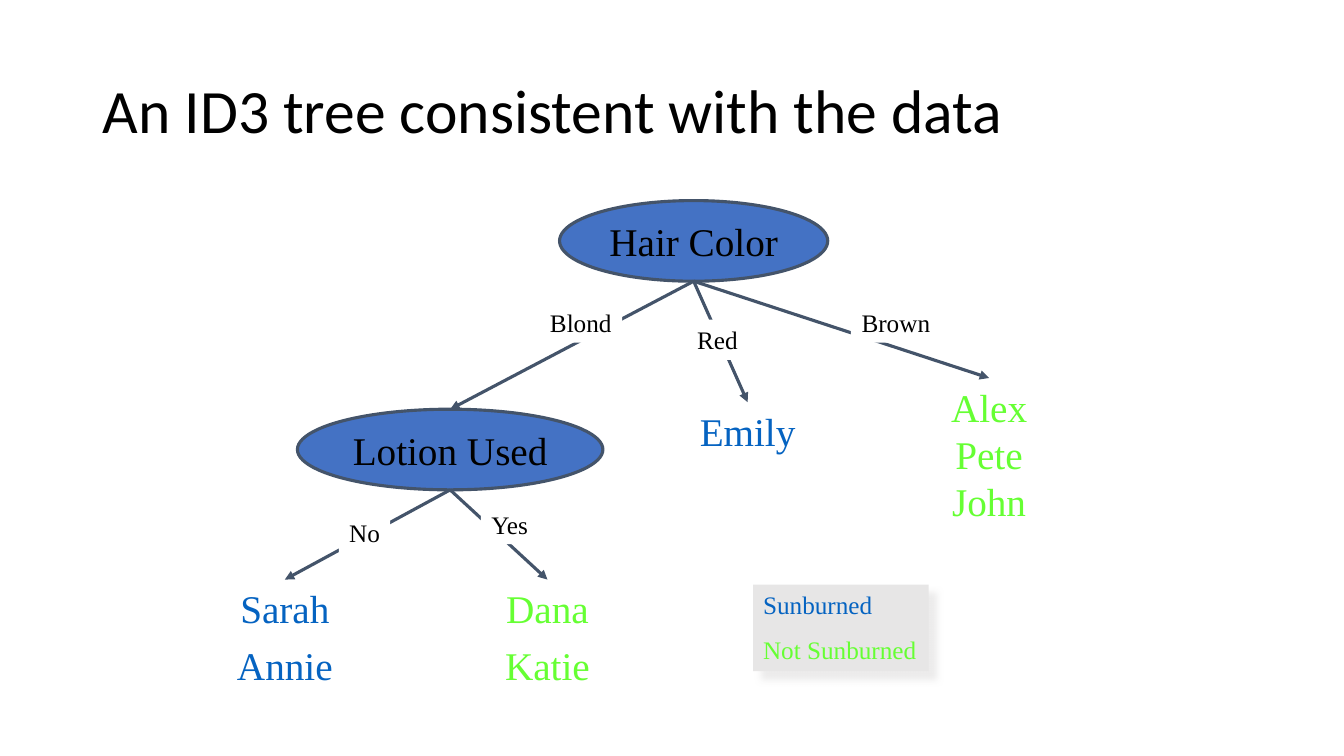
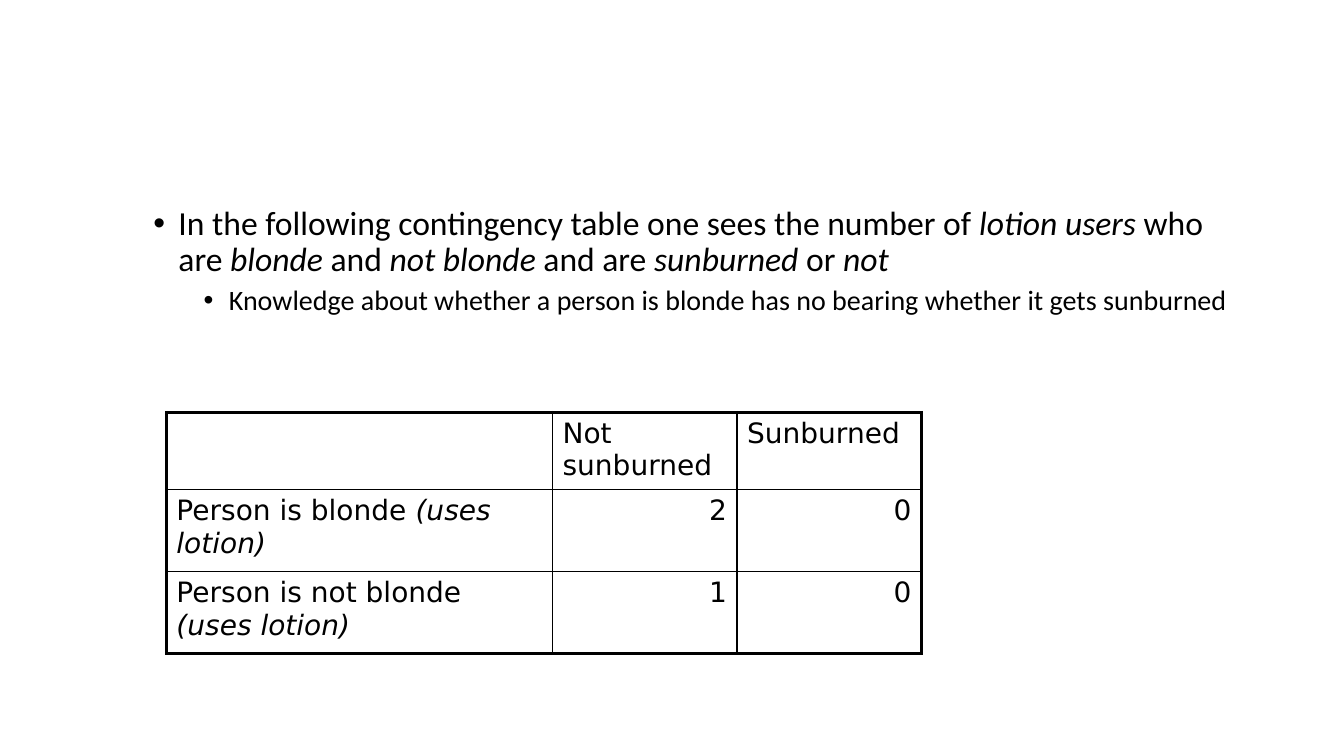
from dataclasses import dataclass
from pptx import Presentation
from pptx.dml.color import RGBColor
from pptx.enum.shapes import MSO_CONNECTOR, MSO_SHAPE
from pptx.enum.text import MSO_ANCHOR, MSO_AUTO_SIZE, PP_ALIGN
from pptx.oxml.ns import qn
from pptx.util import Inches, Pt
from lxml.etree import SubElement


@dataclass(frozen=True)
class Theme:
    black: str = "000000"
    white: str = "FFFFFF"
    blue: str = "0563C1"
    green: str = "66FF33"
    node: str = "4472C4"
    edge: str = "44546A"
    gray: str = "E7E6E6"
    sans: str = "Calibri"
    serif: str = "Times New Roman"
    grid: str = "DejaVu Sans"
    title: int = 44
    name: int = 28
    point: int = 24
    small: int = 20
    label: int = 18
    thick: float = 2.25
    thin: float = 1


def rgb(color):
    return RGBColor.from_string(color)


def paint(parent, color):
    """Add a solid fill element to the parent."""
    fill = SubElement(parent, qn("a:solidFill"))
    SubElement(fill, qn("a:srgbClr"), val=color)


class Deck:
    def __init__(self, theme):
        self.theme = theme
        self.show = Presentation()
        self.show.slide_width = Inches(13.33)
        self.show.slide_height = Inches(7.5)
        self.slide = None

    def start(self, layout):
        self.slide = self.show.slides.add_slide(self.show.slide_layouts[layout])

    def place(self, shape, left, top, width, height):
        shape.left, shape.top = Inches(left), Inches(top)
        shape.width, shape.height = Inches(width), Inches(height)

    def style(self, para, font, size, color, align=PP_ALIGN.LEFT):
        para.alignment = align
        for run in para.runs:
            run.font.name = font
            run.font.size = Pt(size)
            run.font.color.rgb = rgb(color)

    def mix(self, para, text):
        """Set text in which *stars* enclose italic words."""
        for spot, part in enumerate(text.split("*")):
            if part:
                run = para.add_run()
                run.text = part
                run.font.italic = spot % 2 == 1

    def letter(self, shape, text, size, color, align=PP_ALIGN.CENTER, gap=0):
        """Set the text of a shape, with a gap before all but the first line."""
        frame = shape.text_frame
        frame.text = text
        frame.word_wrap = False
        for spot, para in enumerate(frame.paragraphs):
            self.style(para, self.theme.serif, size, color, align)
            para.space_before = Pt(gap if spot else 0)

    def title(self, text):
        shape = self.slide.shapes.title
        self.place(shape, 0.92, 0.4, 11.5, 1.45)
        frame = shape.text_frame
        frame.text = text
        frame.vertical_anchor = MSO_ANCHOR.MIDDLE
        frame.auto_size = MSO_AUTO_SIZE.NONE
        para = frame.paragraphs[0]
        para.line_spacing = 0.9
        self.style(para, self.theme.sans, self.theme.title, self.theme.black)

    def shape(self, kind, box, fill):
        shape = self.slide.shapes.add_shape(kind, *map(Inches, box))
        shape.shadow.inherit = False
        shape.fill.solid()
        shape.fill.fore_color.rgb = rgb(fill)
        shape.line.fill.background()
        shape.text_frame.vertical_anchor = MSO_ANCHOR.TOP
        return shape

    def node(self, text, *box):
        oval = self.shape(MSO_SHAPE.OVAL, box, self.theme.node)
        oval.line.color.rgb = rgb(self.theme.edge)
        oval.line.width = Pt(self.theme.thick)
        oval.text_frame.vertical_anchor = MSO_ANCHOR.MIDDLE
        self.letter(oval, text, self.theme.name, self.theme.black)
        return oval

    def leaf(self, text, color, *box, gap=0):
        shape = self.slide.shapes.add_textbox(*map(Inches, box))
        self.letter(shape, text, self.theme.name, color, gap=gap)
        return shape

    def label(self, text, *box):
        shape = self.shape(MSO_SHAPE.RECTANGLE, box, self.theme.white)
        self.letter(shape, text, self.theme.label, self.theme.black)

    def arrow(self, start, end):
        """Draw an arrow from the foot of one shape to the top of another."""
        x, y = start.left + start.width // 2, start.top + start.height
        line = self.slide.shapes.add_connector(
            MSO_CONNECTOR.STRAIGHT, x, y, end.left, end.top)
        line.end_connect(end, 0)
        line.line.color.rgb = rgb(self.theme.edge)
        line.line.width = Pt(self.theme.thick)
        SubElement(line.get_or_add_ln(), qn("a:tailEnd"), type="triangle")
        SubElement(line._element.spPr, qn("a:effectLst"))

    def legend(self, items, *box):
        shape = self.shape(MSO_SHAPE.RECTANGLE, box, self.theme.gray)
        self.letter(shape, "\n".join(items), self.theme.label, self.theme.black,
                    PP_ALIGN.LEFT, gap=10)
        for para, color in zip(shape.text_frame.paragraphs, items.values()):
            para.runs[0].font.color.rgb = rgb(color)
        cast = SubElement(shape._element.spPr.find(qn("a:effectLst")),
                          qn("a:outerShdw"), blurRad=str(Pt(5)),
                          dist=str(Pt(8.5)), dir="2700000")
        tint = SubElement(cast, qn("a:srgbClr"), val=self.theme.gray)
        SubElement(tint, qn("a:alpha"), val="75000")

    def points(self, items, *box):
        """Fill the body with bullets, each one level below the last."""
        body = self.slide.placeholders[1]
        self.place(body, *box)
        frame = body.text_frame
        frame.auto_size = MSO_AUTO_SIZE.NONE
        frame.text = "\n" * (len(items) - 1)
        for level, (para, (text, size)) in enumerate(zip(frame.paragraphs, items)):
            self.mix(para, text)
            para.level = level
            para.line_spacing = 0.9
            para.space_before = Pt(5)
            self.style(para, self.theme.sans, size, self.theme.black)
            props = para._p.get_or_add_pPr()
            props.set("marL", str(Inches(0.75 + level / 2)))
            props.set("indent", str(Inches(-0.25)))
            SubElement(props, qn("a:buFont"), typeface="Arial")
            SubElement(props, qn("a:buChar"), char="•")

    def border(self, cell, outer):
        """Rule the four sides, thick where a side lies on the outer frame."""
        props = cell._tc.get_or_add_tcPr()
        for side, thick in zip("LRTB", outer):
            width = self.theme.thick if thick else self.theme.thin
            paint(SubElement(props, qn("a:ln" + side), w=str(Pt(width))),
                  self.theme.black)

    def table(self, rows, left, top, widths, heights):
        table = self.slide.shapes.add_table(
            len(rows), len(widths), Inches(left), Inches(top),
            Inches(sum(widths)), Inches(sum(heights))).table
        table.first_row = table.horz_banding = False
        for col, width in zip(table.columns, widths):
            col.width = Inches(width)
        for r, texts in enumerate(rows):
            table.rows[r].height = Inches(heights[r])
            for c, text in enumerate(texts):
                cell = table.cell(r, c)
                para = cell.text_frame.paragraphs[0]
                self.mix(para, text)
                align = PP_ALIGN.RIGHT if r and c else PP_ALIGN.LEFT
                self.style(para, self.theme.grid, self.theme.small,
                           self.theme.black, align)
                self.border(cell, (c == 0, c == len(widths) - 1,
                                   r == 0, r == len(rows) - 1))
                cell.fill.background()


def draw_tree(deck):
    theme = deck.theme
    deck.start(5)
    deck.title("An ID3 tree consistent with the data")
    hair = deck.node("Hair Color", 5.55, 1.99, 2.66, 0.8)
    lotion = deck.node("Lotion Used", 2.95, 4.06, 3.03, 0.8)
    sarah = deck.leaf("Sarah\nAnnie", theme.blue, 2.25, 5.75, 1.15, 1.13, gap=7)
    dana = deck.leaf("Dana\nKatie", theme.green, 4.91, 5.75, 1.04, 1.13, gap=7)
    emily = deck.leaf("Emily", theme.blue, 6.84, 3.99, 1.15, 0.57)
    alex = deck.leaf("Alex\nPete\nJohn", theme.green, 9.33, 3.75, 0.96, 1.5)
    for start, ends in ((hair, (lotion, emily, alex)), (lotion, (sarah, dana))):
        for end in ends:
            deck.arrow(start, end)
    for text, left, top, width in (
            ("Blond", 5.35, 3, 0.82), ("Red", 6.81, 3.17, 0.61),
            ("Brown", 8.44, 3, 0.89), ("No", 3.36, 5.08, 0.51),
            ("Yes", 4.77, 5, 0.57)):
        deck.label(text, left, top, width, 0.4)
    deck.legend({"Sunburned": theme.blue, "Not Sunburned": theme.green},
                7.47, 5.8, 1.74, 0.86)


def draw_counts(deck):
    theme = deck.theme
    deck.start(1)
    title = deck.slide.shapes.title._element
    title.getparent().remove(title)
    deck.points((
        ("In the following contingency table one sees the number of *lotion users*"
         " who are *blonde* and *not blonde* and are *sunburned* or *not*",
         theme.point),
        ("Knowledge about whether a person is blonde has no bearing whether"
         " it gets sunburned", theme.small)), 0.92, 2, 11.5, 4.76)
    deck.table((
        ("", "Not sunburned", "Sunburned"),
        ("Person is blonde *(uses lotion)*", "2", "0"),
        ("Person is not blonde *(uses lotion)*", "1", "0")),
        1.65, 4.09, (3.83, 1.83, 1.83), (0.77, 0.81, 0.81))


def main():
    deck = Deck(Theme())
    draw_tree(deck)
    draw_counts(deck)
    deck.show.save("out.pptx")


if __name__ == "__main__":
    main()
